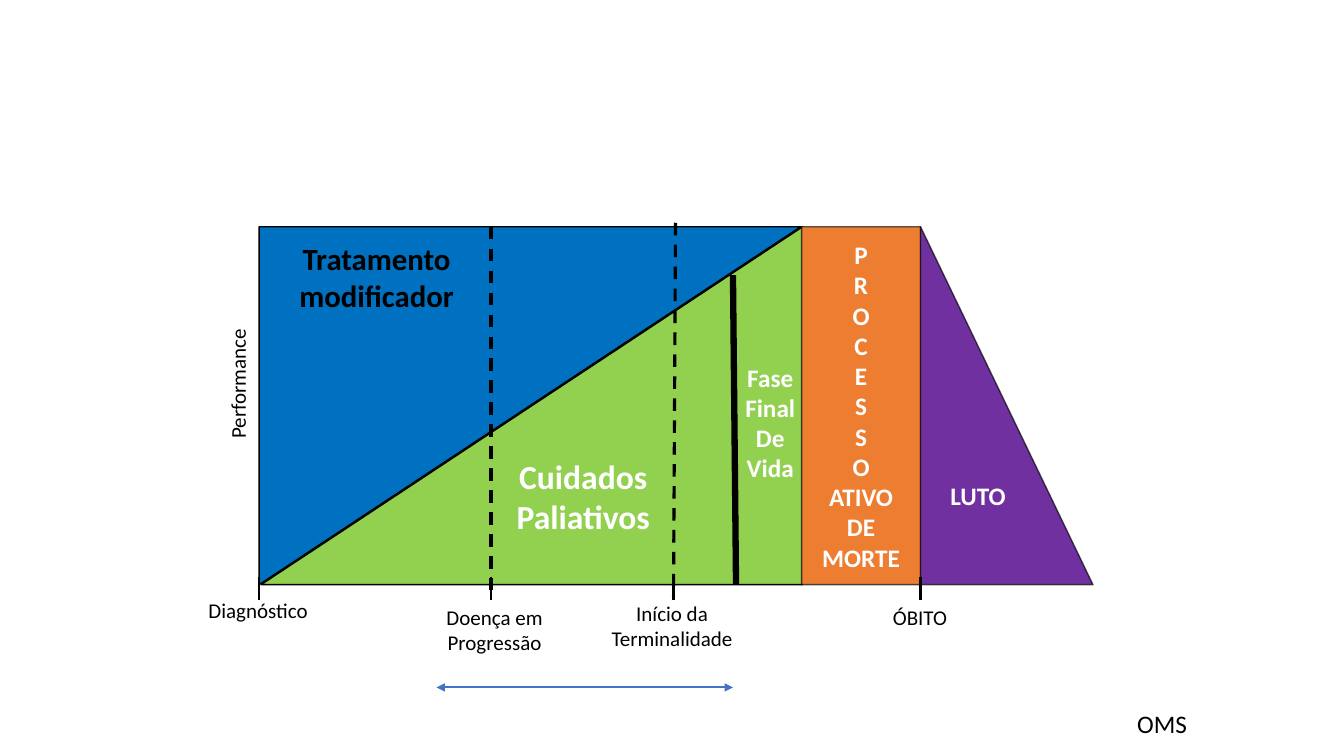
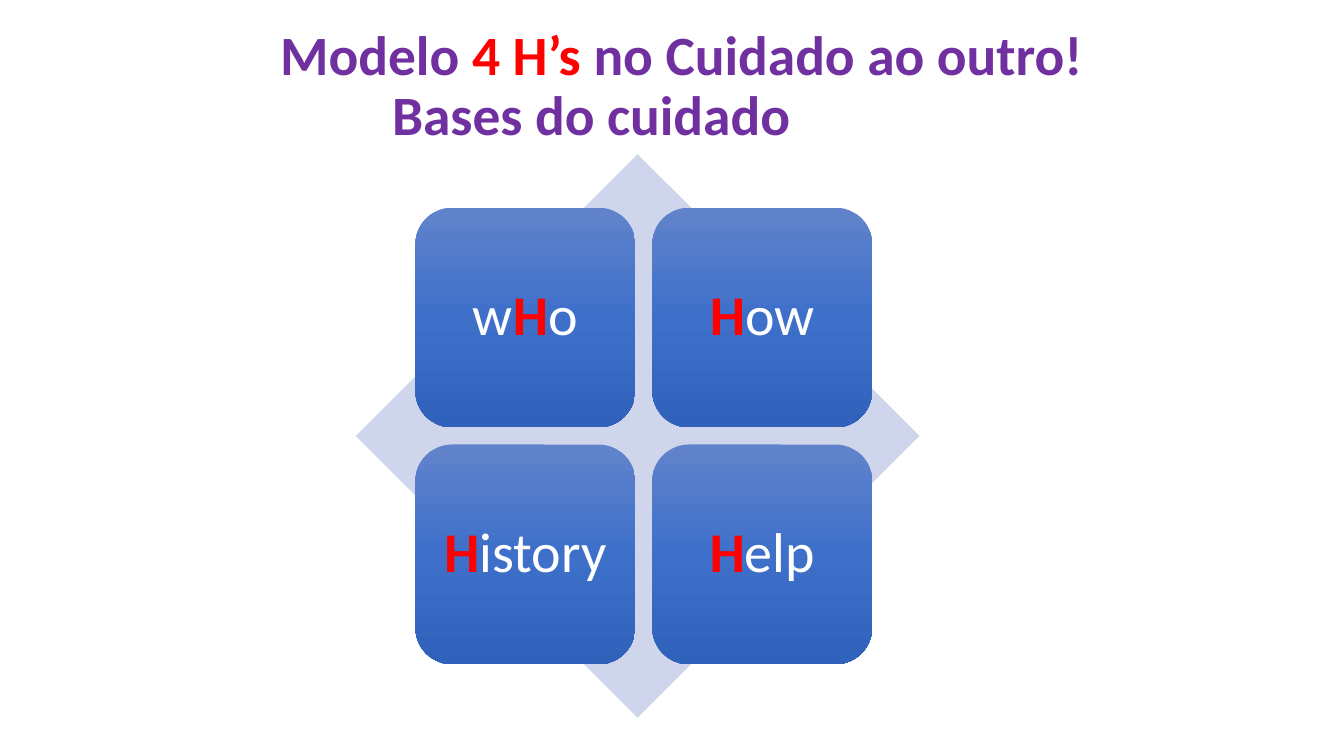
"""Builds two slides on palliative care: the care continuum and the 4 H model."""
from copy import deepcopy

from lxml.etree import SubElement
from pptx import Presentation
from pptx.dml.color import RGBColor
from pptx.enum.dml import MSO_LINE
from pptx.enum.shapes import MSO_CONNECTOR, MSO_SHAPE
from pptx.enum.text import MSO_ANCHOR, PP_ALIGN
from pptx.oxml.ns import qn
from pptx.util import Inches, Pt

FONT = "Calibri"
BLACK, WHITE, RED, PURPLE = "000000", "FFFFFF", "FF0000", "7030A0"
GREEN, BLUE, ORANGE = "92D050", "0070C0", "ED7D31"
ARROW_BLUE, PALE_BLUE = "4472C4", "CFD5EA"
CARD_GRADIENT = ["6183CB", "3E70CA", "3062BB"]


def rgb(value):
    return RGBColor.from_string(value)


def write(frame, paragraphs, size=15, color=BLACK, bold=False, align=PP_ALIGN.CENTER,
          anchor=MSO_ANCHOR.TOP, wrap=True, spacing=None, indents=()):
    frame.word_wrap = wrap
    frame.vertical_anchor = anchor
    for index, runs in enumerate(paragraphs):
        paragraph = frame.paragraphs[0] if index == 0 else frame.add_paragraph()
        paragraph.alignment = align
        if spacing:
            paragraph.line_spacing = spacing
        if indents:
            paragraph._p.get_or_add_pPr().set("marL", str(Inches(indents[index])))
        for content, run_color, run_bold in [(runs, color, bold)] if isinstance(runs, str) else runs:
            run = paragraph.add_run()
            run.text = content
            run.font.name = FONT
            run.font.size = Pt(size)
            run.font.bold = run_bold
            run.font.color.rgb = rgb(run_color)


class Deck:
    def __init__(self):
        self.presentation = Presentation()
        self.presentation.slide_width = Inches(13.33)
        self.presentation.slide_height = Inches(7.5)
        self.slide = None

    def new_slide(self):
        self.slide = self.presentation.slides.add_slide(self.presentation.slide_layouts[6])

    def text(self, paragraphs, left, top, width, height, rotation=0, **style):
        box = self.slide.shapes.add_textbox(Inches(left), Inches(top), Inches(width), Inches(height))
        box.rotation = rotation
        write(box.text_frame, paragraphs, **style)

    def shape(self, kind, left, top, width, height, fill, outline=None, alpha=None, rotation=0):
        shape = self.slide.shapes.add_shape(
            kind, Inches(left), Inches(top), Inches(width), Inches(height))
        shape.shadow.inherit = False
        shape.rotation = rotation
        if isinstance(fill, list):
            self.blend(shape, fill)
        else:
            shape.fill.solid()
            shape.fill.fore_color.rgb = rgb(fill)
        if outline is None:
            shape.line.fill.background()
        else:
            shape.line.color.rgb = rgb(outline)
            shape.line.width = Pt(1)
        if alpha is not None:
            ink = shape.line._ln.find(".//" + qn("a:srgbClr"))
            SubElement(ink, qn("a:alpha"), val=str(alpha * 1000))
        return shape

    def blend(self, shape, colors):
        shape.fill.gradient()
        shape.fill.gradient_angle = 270
        stops = shape._element.spPr.find(qn("a:gradFill")).find(qn("a:gsLst"))
        while len(stops) < len(colors):
            stops.append(deepcopy(stops[0]))
        for index, (stop, color) in enumerate(zip(shape.fill.gradient_stops, colors)):
            stop.position = index / (len(colors) - 1)
            stop.color.rgb = rgb(color)

    def line(self, x1, y1, x2, y2, width=2, color=BLACK, dashed=False, arrows=False):
        line = self.slide.shapes.add_connector(
            MSO_CONNECTOR.STRAIGHT, Inches(x1), Inches(y1), Inches(x2), Inches(y2))
        line.line.color.rgb = rgb(color)
        line.line.width = Pt(width)
        if dashed:
            line.line.dash_style = MSO_LINE.DASH
        if arrows:
            for end in ("a:headEnd", "a:tailEnd"):
                SubElement(line.line._ln, qn(end), type="triangle")
        SubElement(line._element.spPr, qn("a:effectLst"))


def build_continuum(deck):
    deck.new_slide()
    diagnosis, progression, terminal, death = 2.57, 4.87, 6.68, 9.13
    top, height, base = 2.25, 3.55, 5.8

    for left, rotation, fill in ((3.5, 270, GREEN), (3.48, 90, BLUE)):
        deck.shape(MSO_SHAPE.RIGHT_TRIANGLE, left, 1.34, height, 5.37, fill, BLACK,
                   rotation=rotation)
    dying = deck.shape(MSO_SHAPE.RECTANGLE, 7.95, top, 1.18, height, ORANGE, BLACK, 66)
    grief = deck.shape(MSO_SHAPE.RIGHT_TRIANGLE, death, top, 1.71, height, PURPLE, BLACK, 66)
    for stage, paragraphs in ((dying, [*"PROCESSO", "ATIVO", "DE", "MORTE"]), (grief, ["LUTO"])):
        write(stage.text_frame, paragraphs, size=18, color=WHITE, bold=True,
              anchor=MSO_ANCHOR.MIDDLE)

    deck.line(progression, top, progression, 5.95, width=2.25, dashed=True)
    deck.line(6.7, 2.21, terminal, 5.92, width=2.25, dashed=True)
    for milestone in (diagnosis, progression, terminal, death):
        deck.line(milestone, 5.72, milestone, 5.95)
    deck.line(7.27, 2.73, 7.3, base, width=4.5)
    deck.line(4.33, 6.82, 7.27, 6.82, width=1.5, color=ARROW_BLUE, arrows=True)

    deck.text(["Tratamento modificador"], 2.65, 2.33, 2.17, 0.84, size=22, bold=True)
    deck.text(["Cuidados Paliativos"], 4.73, 4.47, 2.11, 0.91, size=24, color=WHITE, bold=True)
    deck.text(["Fase", "Final", "De", "Vida"], 7.26, 3.54, 0.76, 1.31, size=18, color=WHITE,
              bold=True, wrap=False)
    deck.text(["Performance"], 1.56, 3.48, 1.59, 0.35, rotation=270, align=PP_ALIGN.LEFT)
    deck.text(["Diagnóstico"], 1.85, 5.88, 1.42, 0.35)
    deck.text(["Doença em Progressão"], 4.08, 5.95, 1.65, 0.61)
    deck.text(["Início da", "Terminalidade"], 5.84, 5.91, 1.65, 0.61)
    deck.text(["ÓBITO"], 8.33, 5.95, 1.59, 0.35)
    deck.text(["OMS"], 11.18, 6.98, 0.7, 0.4, size=18, align=PP_ALIGN.LEFT, wrap=False)


def build_four_h(deck):
    deck.new_slide()
    heading = [("Modelo ", PURPLE, True), ("4 H’s ", RED, True),
               ("no Cuidado ao outro!", PURPLE, True)]
    deck.text([heading, "Bases do cuidado"], 0.85, 0.23, 11.41, 1.3, size=39.6, color=PURPLE,
              bold=True, align=PP_ALIGN.LEFT, spacing=0.9, indents=(1.83, 2.94))

    deck.shape(MSO_SHAPE.DIAMOND, 3.53, 1.53, 5.59, 5.59, PALE_BLUE)
    card_size, pitch = 2.18, 2.35
    words = (("w", "o"), ("", "ow"), ("", "istory"), ("", "elp"))
    for index, (before, after) in enumerate(words):
        row, column = divmod(index, 2)
        card = deck.shape(MSO_SHAPE.ROUNDED_RECTANGLE, 4.12 + column * pitch,
                          2.06 + row * pitch, card_size, card_size, CARD_GRADIENT)
        runs = [(before, WHITE, False), ("H", RED, True), (after, WHITE, False)]
        write(card.text_frame, [[run for run in runs if run[0]]], size=40, spacing=0.9,
              anchor=MSO_ANCHOR.MIDDLE)


def main():
    deck = Deck()
    build_continuum(deck)
    build_four_h(deck)
    deck.presentation.save("out.pptx")


if __name__ == "__main__":
    main()
